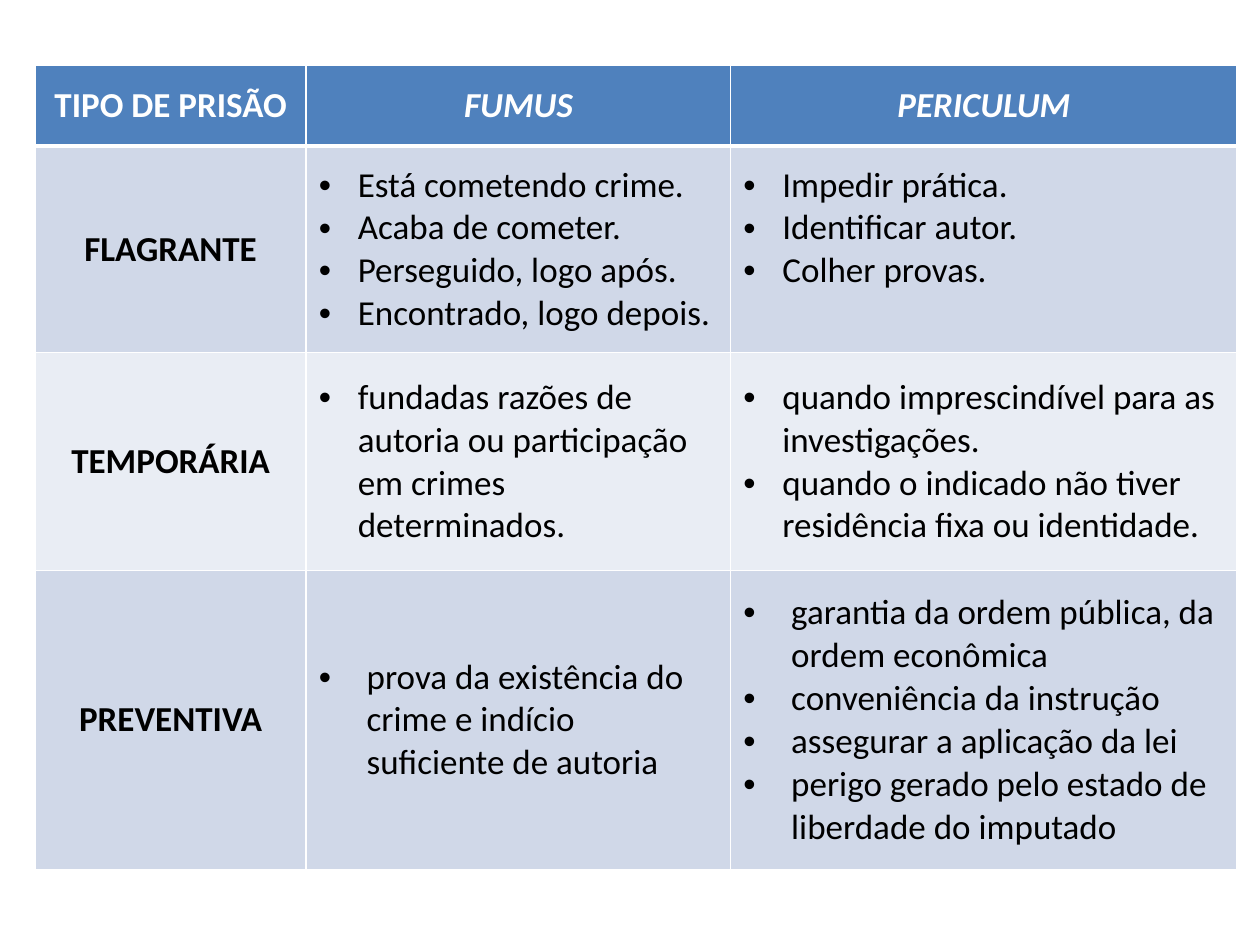
from pptx import Presentation
from pptx.dml.color import RGBColor
from pptx.enum.text import MSO_ANCHOR, PP_ALIGN
from pptx.oxml.ns import qn
from pptx.util import Inches, Pt
from lxml.etree import SubElement

# Content
HEAD = ["TIPO DE PRISÃO", "FUMUS", "PERICULUM"]
# type of arrest, bullet indent, fumus items, periculum items
ROWS = [
    ("FLAGRANTE", 0.31,
     ["Está cometendo crime.", "Acaba de cometer.",
      "Perseguido, logo após.", "Encontrado, logo depois."],
     ["Impedir prática.", "Identificar autor.", "Colher provas."]),
    ("TEMPORÁRIA", 0.31,
     ["fundadas razões de autoria ou participação em crimes determinados."],
     ["quando imprescindível para as investigações.",
      "quando o indicado não tiver residência fixa ou identidade."]),
    ("PREVENTIVA", 0.38,
     ["prova da existência do crime e indício suficiente de autoria"],
     ["garantia da ordem pública, da ordem econômica",
      "conveniência da instrução",
      "assegurar a aplicação da lei",
      "perigo gerado pelo estado de liberdade do imputado"]),
]
COLORS = {"head": "4F81BD", "odd": "D0D8E8", "even": "E9EDF4",
          "line": "FFFFFF", "light": "FFFFFF", "dark": "000000"}
WIDTHS = [2.15, 3.37, 4.02]
HEIGHTS = [0.64, 1.64, 1.73, 2.37]
LEFT, TOP = 0.28, 0.52


def rgb(name):
    return RGBColor.from_string(COLORS[name])


def border(cell, side, width):
    line = SubElement(cell._tc.get_or_add_tcPr(), qn("a:ln" + side), w=str(Pt(width)))
    fill = SubElement(line, qn("a:solidFill"))
    SubElement(fill, qn("a:srgbClr"), val=COLORS["line"])


def style(cell, fill, top=1, bottom=1):
    for side, width in (("L", 1), ("R", 1), ("T", top), ("B", bottom)):
        border(cell, side, width)
    cell.fill.solid()
    cell.fill.fore_color.rgb = rgb(fill)
    cell.vertical_anchor = MSO_ANCHOR.MIDDLE


def write(para, text, color="dark", bold=False, italic=False):
    run = para.add_run()
    run.text = text
    font = run.font
    font.name, font.size = "Calibri", Pt(20)
    font.bold, font.italic = bold, italic
    font.color.rgb = rgb(color)


def title(cell, text, color, italic=False):
    para = cell.text_frame.paragraphs[0]
    para.alignment = PP_ALIGN.CENTER
    write(para, text, color, True, italic)


def bullets(cell, items, indent):
    frame = cell.text_frame
    for i, item in enumerate(items):
        para = frame.add_paragraph() if i else frame.paragraphs[0]
        para.alignment = PP_ALIGN.LEFT
        props = para._p.get_or_add_pPr()
        props.set("marL", str(Inches(indent)))
        props.set("indent", str(-Inches(indent)))
        SubElement(props, qn("a:buFont"), typeface="Arial")
        SubElement(props, qn("a:buChar"), char="•")
        write(para, item)


deck = Presentation()
deck.slide_width, deck.slide_height = Inches(10), Inches(7.5)
slide = deck.slides.add_slide(deck.slide_layouts[6])

# Table grid
table = slide.shapes.add_table(
    len(HEIGHTS), len(WIDTHS), Inches(LEFT), Inches(TOP),
    Inches(sum(WIDTHS)), Inches(sum(HEIGHTS))).table
for col, width in zip(table.columns, WIDTHS):
    col.width = Inches(width)
for row, height in zip(table.rows, HEIGHTS):
    row.height = Inches(height)

# Header row
for c, text in enumerate(HEAD):
    cell = table.cell(0, c)
    style(cell, "head", bottom=3)
    title(cell, text, "light", italic=c > 0)

# Arrest rows
for r, (name, indent, *lists) in enumerate(ROWS, 1):
    for c in range(len(WIDTHS)):
        style(table.cell(r, c), "odd" if r % 2 else "even", top=3 if r == 1 else 1)
    title(table.cell(r, 0), name, "dark")
    for c, items in enumerate(lists, 1):
        bullets(table.cell(r, c), items, indent)

# Raise the three short items level with the four beside them
table.cell(1, 2).margin_bottom = Inches(0.39)

deck.save("out.pptx")
